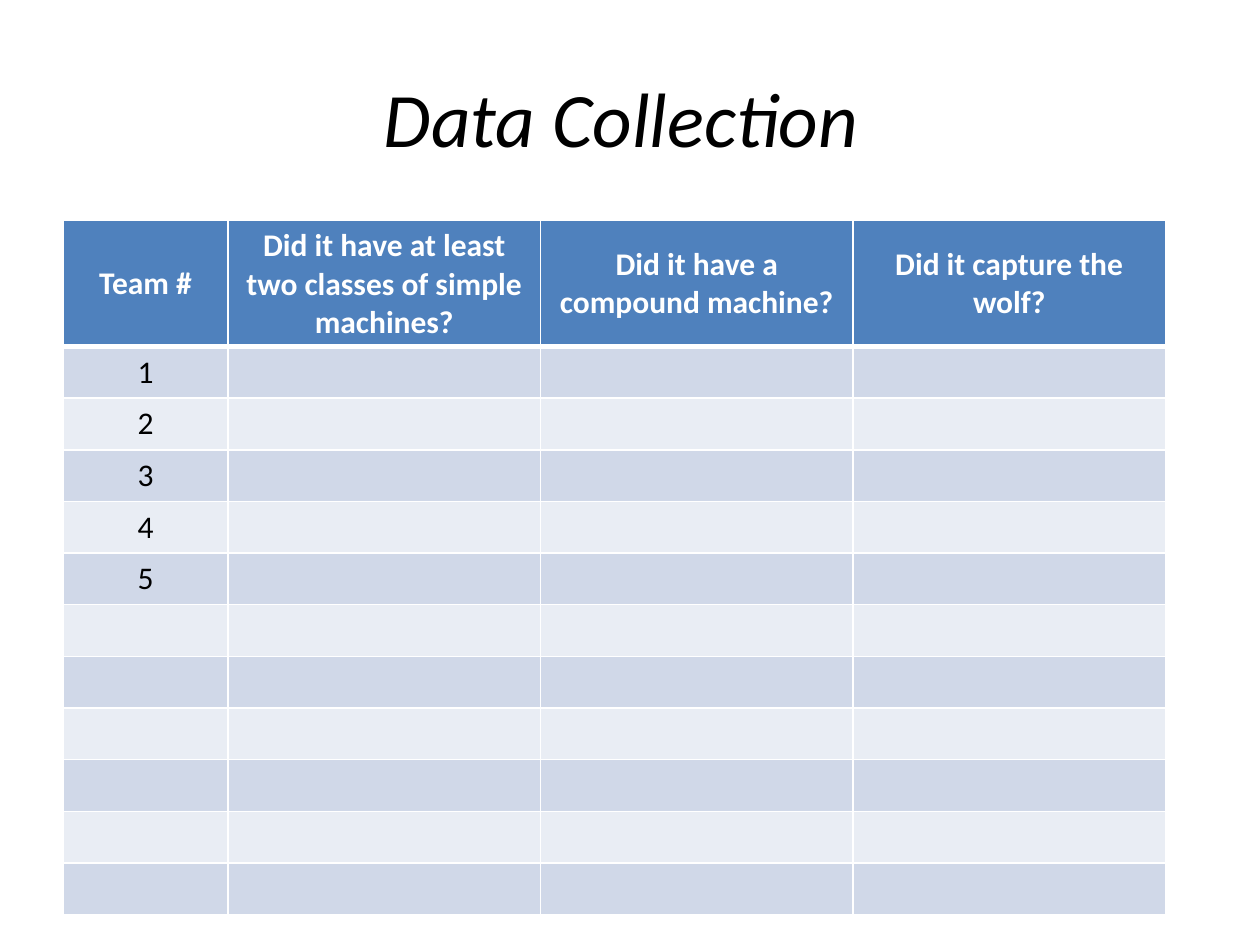
import lxml.etree
import pptx
import pptx.dml.color
import pptx.enum.text
import pptx.oxml.ns
import pptx.util

Inches = pptx.util.Inches
THEME = {
    "font": "Calibri",
    "title_size": 44,
    "table_size": 18,
    "text": "000000",
    "white": "FFFFFF",
    "header": "4F81BD",
    "bands": ("D0D8E8", "E9EDF4"),
    "thin": 1,
    "thick": 3,
}
QUESTIONS = (
    "Team #",
    "Did it have at least two classes of simple machines?",
    "Did it have a compound machine?",
    "Did it capture the wolf?",
)
TEAMS = 5
BODY_ROWS = 11
COLUMN_WIDTHS = (1.31, 2.48, 2.48, 2.48)
HEADER_HEIGHT = 1
ROW_HEIGHT = 0.41


def write(frame, text, size, color, bold=False, italic=False):
    frame.vertical_anchor = pptx.enum.text.MSO_ANCHOR.MIDDLE
    para = frame.paragraphs[0]
    para.alignment = pptx.enum.text.PP_ALIGN.CENTER
    span = para.add_run()
    span.text = text
    span.font.name = THEME["font"]
    span.font.size = pptx.util.Pt(size)
    span.font.bold = bold
    span.font.italic = italic
    span.font.color.rgb = pptx.dml.color.RGBColor.from_string(color)


def add_border(cell, side, width):
    qn = pptx.oxml.ns.qn
    properties = cell._tc.get_or_add_tcPr()
    line = lxml.etree.SubElement(properties, qn(f"a:ln{side}"), w=str(pptx.util.Pt(width)))
    fill = lxml.etree.SubElement(line, qn("a:solidFill"))
    lxml.etree.SubElement(fill, qn("a:srgbClr"), val=THEME["white"])


deck = pptx.Presentation()
deck.slide_width = Inches(10)
deck.slide_height = Inches(7.5)
page = deck.slides.add_slide(deck.slide_layouts[6])

title = page.shapes.add_textbox(Inches(0.5), Inches(0.3), Inches(9), Inches(1.25))
title.text_frame.word_wrap = True
write(title.text_frame, "Data Collection ", THEME["title_size"], THEME["text"], italic=True)

table = page.shapes.add_table(
    BODY_ROWS + 1, len(QUESTIONS), Inches(0.5), Inches(1.75),
    Inches(sum(COLUMN_WIDTHS)), Inches(HEADER_HEIGHT + BODY_ROWS * ROW_HEIGHT),
).table
for column, width in zip(table.columns, COLUMN_WIDTHS):
    column.width = Inches(width)

for row_index, row in enumerate(table.rows):
    is_header = row_index == 0
    row.height = Inches(HEADER_HEIGHT if is_header else ROW_HEIGHT)
    color = THEME["header"] if is_header else THEME["bands"][(row_index - 1) % 2]
    top = THEME["thick"] if row_index == 1 else THEME["thin"]
    bottom = THEME["thick"] if is_header else THEME["thin"]
    for cell in row.cells:
        for side, width in (("L", THEME["thin"]), ("R", THEME["thin"]), ("T", top), ("B", bottom)):
            add_border(cell, side, width)
        cell.fill.solid()
        cell.fill.fore_color.rgb = pptx.dml.color.RGBColor.from_string(color)
        cell.vertical_anchor = pptx.enum.text.MSO_ANCHOR.MIDDLE

for column_index, question in enumerate(QUESTIONS):
    cell = table.cell(0, column_index)
    write(cell.text_frame, question, THEME["table_size"], THEME["white"], bold=True)
    cell.vertical_anchor = pptx.enum.text.MSO_ANCHOR.MIDDLE

for team in range(1, TEAMS + 1):
    write(table.cell(team, 0).text_frame, str(team), THEME["table_size"], THEME["text"])

deck.save("out.pptx")
